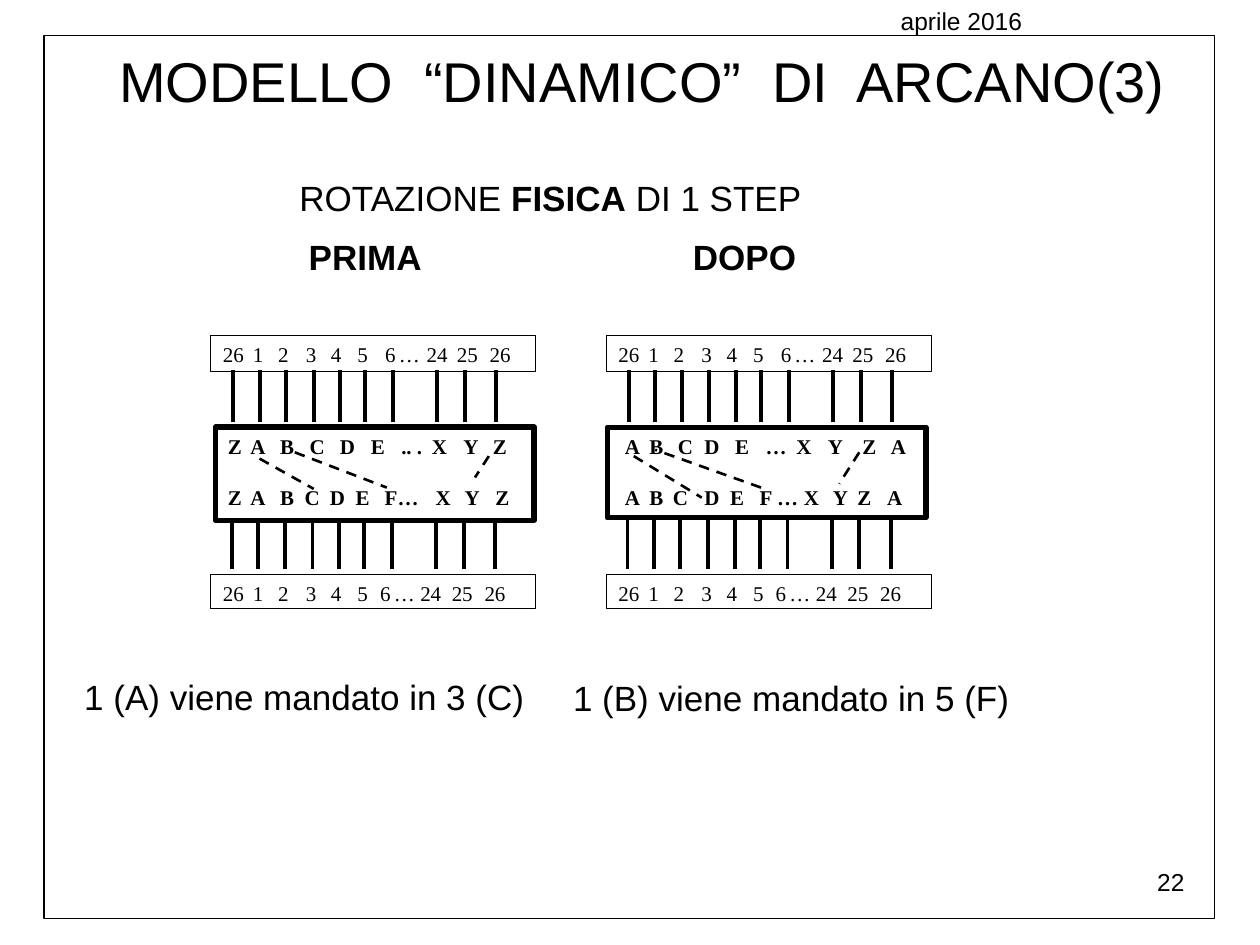
from dataclasses import dataclass

from lxml import etree
from pptx import Presentation
from pptx.dml.color import RGBColor
from pptx.enum.dml import MSO_LINE
from pptx.enum.shapes import MSO_CONNECTOR, MSO_SHAPE
from pptx.enum.text import MSO_ANCHOR, MSO_AUTO_SIZE, PP_ALIGN
from pptx.oxml.ns import qn
from pptx.util import Inches, Pt

RECTANGLE = MSO_SHAPE.RECTANGLE
STRAIGHT = MSO_CONNECTOR.STRAIGHT
DASH = MSO_LINE.DASH
LEFT, CENTER, RIGHT = PP_ALIGN.LEFT, PP_ALIGN.CENTER, PP_ALIGN.RIGHT
TITLE_ONLY_LAYOUT = 5


@dataclass(frozen=True)
class Theme:
    ink: RGBColor = RGBColor(0, 0, 0)
    paper: RGBColor = RGBColor(255, 255, 255)
    sans: str = "Arial"
    serif: str = "Times New Roman"
    title: int = 32
    body: int = 20
    small: int = 14
    label: int = 12
    thin: float = 0.5
    frame: float = 0.75
    wire: float = 1.5
    pin: float = 2.25
    rotor: float = 3


@dataclass(frozen=True)
class Box:
    left: float
    top: float
    width: float
    height: float

    def emu(self) -> tuple:
        return tuple(Inches(v) for v in (self.left, self.top, self.width, self.height))


@dataclass(frozen=True)
class Line:
    """Runs of (text, bold), with "|" as a tab, and the centres of the tab columns."""
    runs: tuple
    centres: tuple = ()


@dataclass(frozen=True)
class Unit:
    """A rotor between two contact strips; x values count from the unit's left."""
    left: float
    rotor: Box
    inset: float
    letters: tuple
    wires: tuple
    caption: str
    caption_box: Box


THEME = Theme()
STRIP_WIDTH, INSET = 2.58, 0.1
PINS = (0.18, 0.39, 0.6, 0.82, 1.03, 1.23, 1.45, 1.8, 2.02, 2.27)
PIN_SPANS = ((0, 2.94, 3.35), (-0.01, 4.11, 4.52))
NUMBERS = (("26|1|2|3|4|5|6|…|24|25|26", False),)
STRIPS = (
    (2.66, 0.29, Line(NUMBERS, (0.38, 0.58, 0.8, 1, 1.21, 1.43, 1.58, 1.8, 2.04, 2.3))),
    (4.56, 0.27, Line(NUMBERS, (0.38, 0.58, 0.8, 1, 1.21, 1.39, 1.54, 1.75, 2, 2.26))),
)
UNITS = (
    Unit(1.67, Box(0.04, 3.39, 2.53, 0.74), 0.1,
         (Line((("Z|A|B|C|D|E|.. .|X|Y|Z", True),),
               (0.38, 0.61, 0.85, 1.09, 1.33, 1.6, 1.82, 2.07, 2.3)),
          Line((("Z|A|B|C|D|E|F…|X|Y|Z", True),),
               (0.38, 0.61, 0.81, 1.01, 1.21, 1.52, 1.85, 2.08, 2.32))),
         ((0.39, 3.64, 0.82, 3.88), (0.67, 3.59, 1.4, 3.87), (2.21, 3.62, 2.1, 3.79)),
         "1 (A) viene mandato in 3 (C)", Box(0.57, 5.31, 4.07, 0.44)),
    Unit(4.81, Box(0.01, 3.39, 2.53, 0.72), 0.14,
         (Line((("A|B|C|D|E|…|X|Y|Z|A", True),),
               (0.4, 0.63, 0.84, 1.08, 1.35, 1.57, 1.82, 2.09, 2.32)),
          Line((("A|B|C|D|E|F|…|X|Y|Z|A", True),),
               (0.4, 0.59, 0.84, 1.04, 1.27, 1.44, 1.63, 1.86, 2.05, 2.29))),
         ((0.22, 3.62, 0.76, 3.95), (1.23, 3.87, 0.39, 3.57), (2.01, 3.59, 1.85, 3.84)),
         "1 (B) viene mandato in 5 (F)", Box(4.45, 5.32, 4.07, 0.44)),
)
HEADING = (
    Line((("|ROTAZIONE ", False), ("FISICA", True), (" DI 1 STEP", False)), (2.7,)),
    Line((("|PRIMA|DOPO", True),), (1.23, 4.24)),
)


def write(shape, lines: tuple, font: str, size: int, align=LEFT,
          gap: float = 0, inset: float = INSET, origin: float = 0) -> None:
    """Fill a shape with lines; origin is the box's left in the tab centres' scale."""
    frame = shape.text_frame
    frame.word_wrap = True
    frame.auto_size = MSO_AUTO_SIZE.NONE
    frame.vertical_anchor = MSO_ANCHOR.TOP
    frame.margin_left, frame.margin_right = Inches(inset), Inches(0.1)
    frame.margin_top = frame.margin_bottom = Inches(0.05)
    for index, line in enumerate(lines):
        paragraph = frame.add_paragraph() if index else frame.paragraphs[0]
        paragraph.alignment = align
        paragraph.space_before = Pt(gap if index else 0)
        if line.centres:
            tabs = etree.SubElement(paragraph._p.get_or_add_pPr(), qn("a:tabLst"))
            for centre in line.centres:
                position = Inches(centre - origin - inset)
                etree.SubElement(tabs, qn("a:tab"), pos=str(position), algn="ctr")
        for text, bold in line.runs:
            run = paragraph.add_run()
            run.text = text.replace("|", "\t")
            run.font.name, run.font.size, run.font.bold = font, Pt(size), bold
            run.font.color.rgb = THEME.ink


def add_text(slide, box: Box, lines: tuple, size: int, align=LEFT, gap: float = 0) -> None:
    write(slide.shapes.add_textbox(*box.emu()), lines, THEME.sans, size, align, gap)


def add_rectangle(slide, box: Box, weight: float, filled: bool = True):
    shape = slide.shapes.add_shape(RECTANGLE, *box.emu())
    shape.shadow.inherit = False
    if filled:
        shape.fill.solid()
        shape.fill.fore_color.rgb = THEME.paper
    else:
        shape.fill.background()
    shape.line.color.rgb = THEME.ink
    shape.line.width = Pt(weight)
    return shape


def add_line(slide, ends: tuple, weight: float, dash=None) -> None:
    connector = slide.shapes.add_connector(STRAIGHT, *(Inches(v) for v in ends))
    connector.line.color.rgb = THEME.ink
    connector.line.width = Pt(weight)
    if dash is not None:
        connector.line.dash_style = dash
    etree.SubElement(connector._element.spPr, qn("a:effectLst"))


def add_unit(slide, unit: Unit) -> None:
    box = unit.rotor
    rotor = add_rectangle(
        slide, Box(unit.left + box.left, box.top, box.width, box.height), THEME.rotor)
    write(rotor, unit.letters, THEME.serif, THEME.label, gap=15,
          inset=unit.inset, origin=box.left)
    for top, height, numbers in STRIPS:
        strip = add_rectangle(slide, Box(unit.left, top, STRIP_WIDTH, height), THEME.thin)
        write(strip, (numbers,), THEME.serif, THEME.label)
    for shift, top, bottom in PIN_SPANS:
        for pin in PINS:
            x = unit.left + pin + shift
            add_line(slide, (x, top, x, bottom), THEME.pin)
    for x1, y1, x2, y2 in unit.wires:
        add_line(slide, (unit.left + x1, y1, unit.left + x2, y2), THEME.wire, DASH)
    add_text(slide, unit.caption_box, (Line(((unit.caption, False),)),), THEME.body)


def main() -> None:
    presentation = Presentation()
    presentation.slide_width, presentation.slide_height = Inches(10), Inches(7.5)
    slide = presentation.slides.add_slide(presentation.slide_layouts[TITLE_ONLY_LAYOUT])

    title = slide.shapes.title
    title.left, title.top, title.width, title.height = Box(0.55, 0.32, 9.1, 0.63).emu()
    write(title, (Line((("MODELLO  “DINAMICO”  DI  ARCANO(3)", False),)),),
          THEME.sans, THEME.title, CENTER)

    add_rectangle(slide, Box(0.35, 0.28, 9.29, 7.01), THEME.frame, filled=False)
    add_text(slide, Box(7.05, 0, 2.2, 0.69), (Line((("aprile 2016", False),)),), THEME.small)
    add_text(slide, Box(7.17, 6.83, 2.33, 0.52), (Line((("22", False),)),),
             THEME.small, RIGHT)
    add_text(slide, Box(1.67, 1.35, 5.95, 0.94), HEADING, THEME.body, gap=10)
    for unit in UNITS:
        add_unit(slide, unit)
    presentation.save("out.pptx")


if __name__ == "__main__":
    main()
